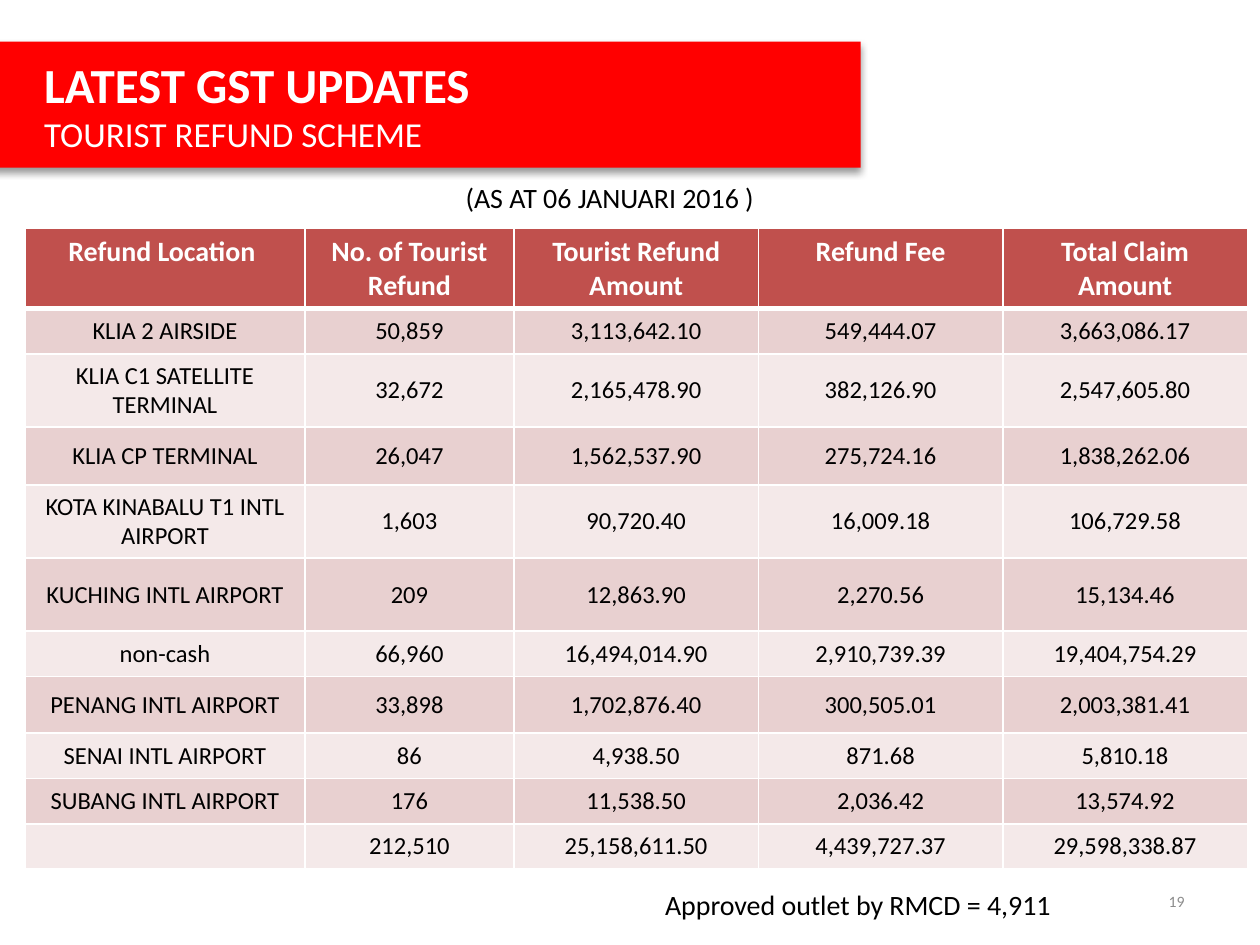
from lxml import etree
from pptx import Presentation
from pptx.dml.color import RGBColor
from pptx.enum.text import MSO_ANCHOR as Anchor, MSO_AUTO_SIZE as AutoSize, PP_ALIGN as Align
from pptx.oxml import parse_xml
from pptx.oxml.ns import nsdecls, qn
from pptx.util import Inches, Pt


def color(value):
    return RGBColor.from_string(value)


def write(para, text, size, ink="000000", align=Align.CENTER, bold=False):
    para.text = text
    para.alignment = align
    font = para.font
    font.name, font.size, font.bold = "Calibri", Pt(size), bold
    font.color.rgb = color(ink)


deck = Presentation()
deck.slide_width, deck.slide_height = Inches(10), Inches(7.5)
page = deck.slides.add_slide(deck.slide_layouts[5])

# Red title banner with a soft shadow below
banner = page.shapes.title
banner.left, banner.top = Inches(-0.25), Inches(0.33)
banner.width, banner.height = Inches(7.08), Inches(1)
banner.fill.solid()
banner.fill.fore_color.rgb = color("FF0000")
banner.element.spPr.append(parse_xml(
    f'<a:effectLst {nsdecls("a")}>'
    f'<a:outerShdw blurRad="{Pt(4)}" dist="{Pt(3)}" dir="5400000" algn="t" rotWithShape="0">'
    '<a:srgbClr val="000000"><a:alpha val="40000"/></a:srgbClr>'
    '</a:outerShdw></a:effectLst>'))
frame = banner.text_frame
frame.auto_size, frame.word_wrap = AutoSize.NONE, True
frame.vertical_anchor = Anchor.MIDDLE
heading, subheading = frame.paragraphs[0], frame.add_paragraph()
write(heading, "LATEST GST UPDATES", 28, "FFFFFF", Align.LEFT, True)
write(subheading, "TOURIST REFUND SCHEME", 20, "FFFFFF", Align.LEFT)
for para in frame.paragraphs:
    para.level = 1
    properties = para._p.get_or_add_pPr()
    properties.set("marL", str(Inches(0.5)))
    properties.set("indent", "0")

# Date, outlet count and page number
labels = [
    ("(AS AT 06 JANUARI 2016 )", 2.24, 1.33, 5.2, 0.47, 16, "000000", Align.CENTER),
    ("Approved outlet by RMCD = 4,911", 4.84, 6.98, 3.94, 0.39, 16, "000000", Align.CENTER),
    ("19", 7.17, 6.95, 2.33, 0.4, 9, "8C8C8C", Align.RIGHT),
]
for text, left, top, width, height, size, ink, align in labels:
    box = page.shapes.add_textbox(Inches(left), Inches(top), Inches(width), Inches(height))
    box.text_frame.word_wrap = True
    box.text_frame.vertical_anchor = Anchor.MIDDLE
    write(box.text_frame.paragraphs[0], text, size, ink, align)

# Refund table
rows = [
    ("Refund Location ", "No. of Tourist Refund", "Tourist Refund Amount", "Refund Fee", "Total Claim Amount"),
    ("KLIA 2 AIRSIDE", "50,859", "3,113,642.10", "549,444.07", "3,663,086.17"),
    ("KLIA C1 SATELLITE TERMINAL", "32,672", "2,165,478.90", "382,126.90", "2,547,605.80"),
    ("KLIA CP TERMINAL", "26,047", "1,562,537.90", "275,724.16", "1,838,262.06"),
    ("KOTA KINABALU T1 INTL AIRPORT", "1,603", "90,720.40", "16,009.18", "106,729.58"),
    ("KUCHING INTL AIRPORT", "209", "12,863.90", "2,270.56", "15,134.46"),
    ("non-cash", "66,960", "16,494,014.90", "2,910,739.39", "19,404,754.29"),
    ("PENANG INTL AIRPORT", "33,898", "1,702,876.40", "300,505.01", "2,003,381.41"),
    ("SENAI INTL AIRPORT", "86", "4,938.50", "871.68", "5,810.18"),
    ("SUBANG INTL AIRPORT", "176", "11,538.50", "2,036.42", "13,574.92"),
    ("", "212,510", "25,158,611.50", "4,439,727.37", "29,598,338.87"),
]
column_widths = [2.22, 1.66, 1.94, 1.94, 1.94]
row_heights = [0.64, 0.36, 0.58, 0.46, 0.58, 0.58, 0.36, 0.45, 0.36, 0.36, 0.36]
table = page.shapes.add_table(
    len(rows), len(column_widths), Inches(0.2), Inches(1.81),
    Inches(sum(column_widths)), Inches(sum(row_heights))).table
for column, width in zip(table.columns, column_widths):
    column.width = Inches(width)
for row, height in zip(table.rows, row_heights):
    row.height = Inches(height)

for r, values in enumerate(rows):
    is_header = r == 0
    for c, text in enumerate(values):
        cell = table.cell(r, c)
        para = cell.text_frame.paragraphs[0]
        if is_header:
            fill = "C0504D"
            write(para, text, 16, "FFFFFF", bold=True)
        else:
            fill = "E8D0D0" if r % 2 else "F4E9E9"
            write(para, text, 14)
            cell.vertical_anchor = Anchor.MIDDLE
            cell.margin_top = cell.margin_bottom = 0

        # White rules, thicker under the header
        borders = cell._tc.get_or_add_tcPr()
        for side in "LRTB":
            thick = (r, side) in ((0, "B"), (1, "T"))
            line = etree.SubElement(borders, qn(f"a:ln{side}"), w=str(Pt(3 if thick else 1)))
            paint = etree.SubElement(line, qn("a:solidFill"))
            etree.SubElement(paint, qn("a:srgbClr"), val="FFFFFF")
        cell.fill.solid()
        cell.fill.fore_color.rgb = color(fill)

deck.save("out.pptx")
